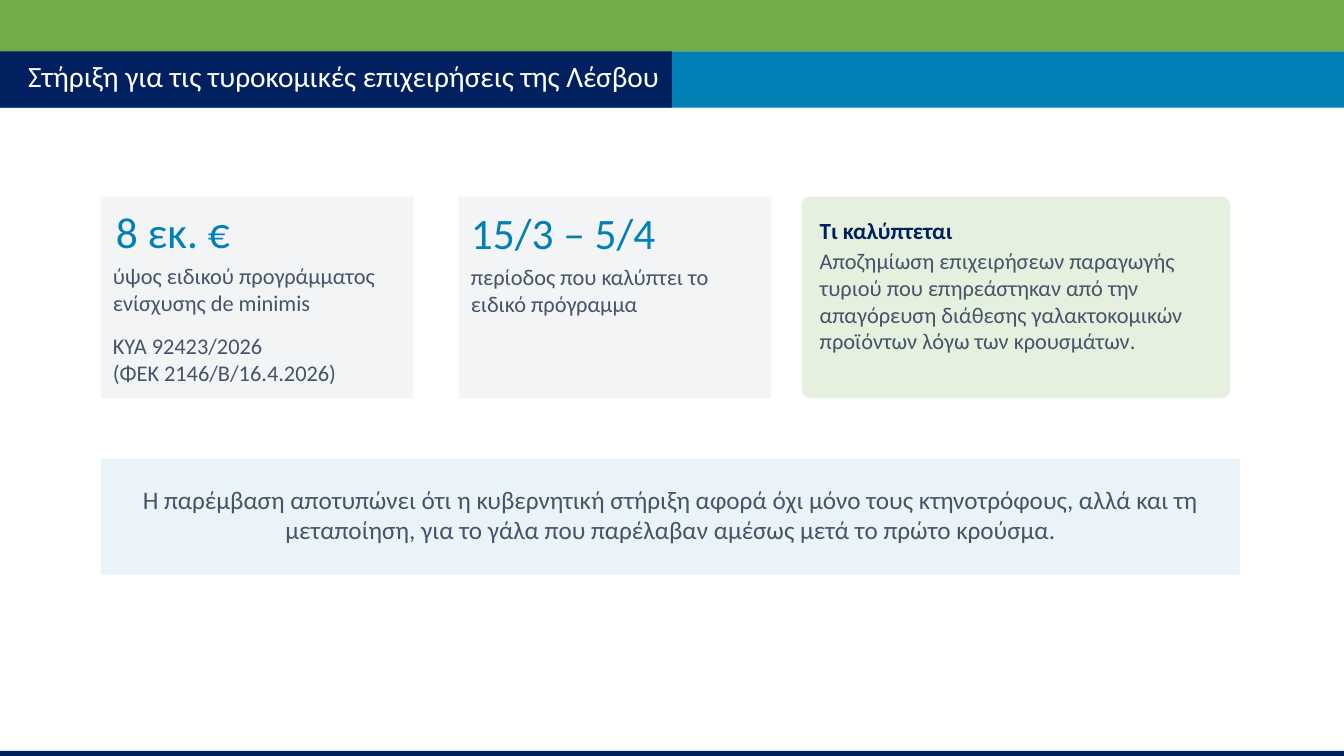
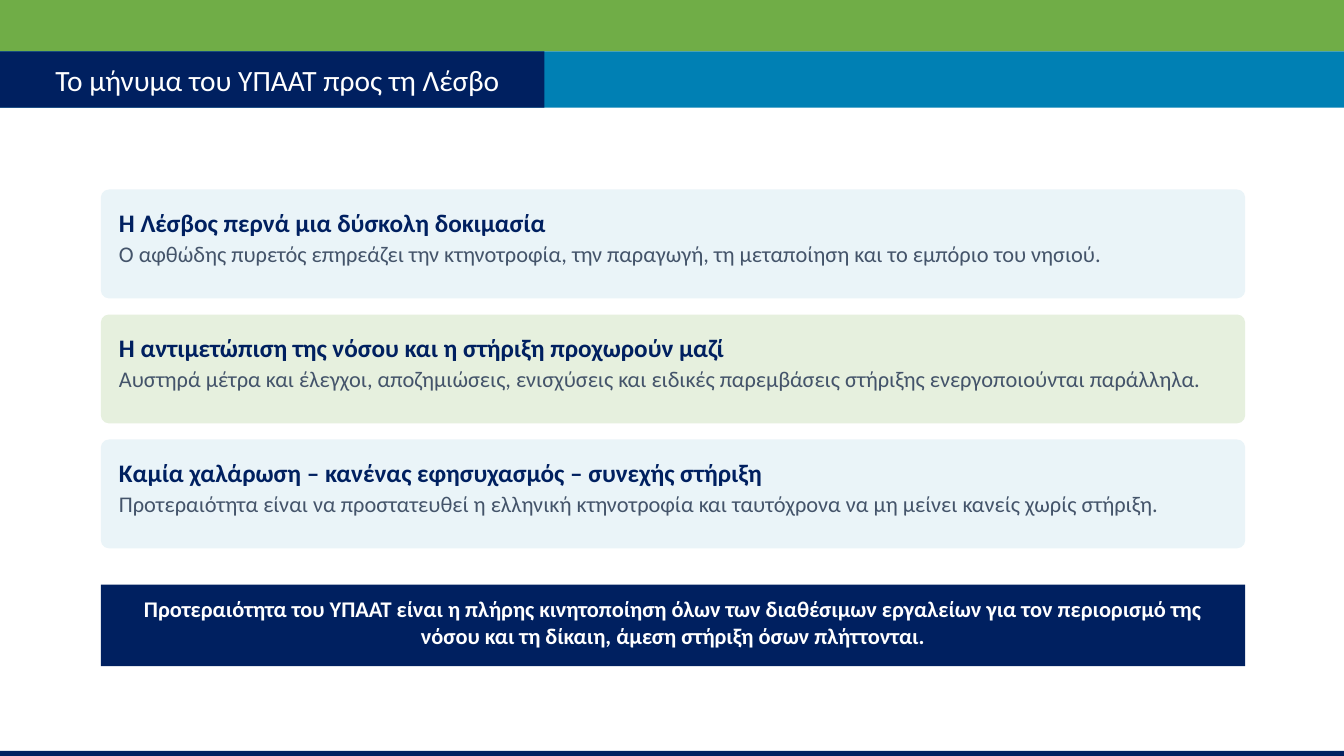
import dataclasses

import pptx
import pptx.dml.color
import pptx.enum.shapes
import pptx.enum.text
import pptx.util

WIDTH, HEIGHT = 13.33, 7.5
COLUMNS, ROWS = 133.3, 75
MARGIN = 10
CORNER = 0.8

SHAPE = pptx.enum.shapes.MSO_SHAPE
ALIGN = pptx.enum.text.PP_ALIGN
ANCHOR = pptx.enum.text.MSO_ANCHOR


@dataclasses.dataclass(frozen=True)
class Theme:
    font: str = "Calibri"
    navy: str = "002060"
    blue: str = "0080B4"
    green: str = "70AD47"
    white: str = "FFFFFF"
    ink: str = "44546A"
    pale_gray: str = "F3F4F6"
    pale_blue: str = "EAF4F8"
    pale_green: str = "E6F0DE"
    title: float = 21
    figure: float = 31
    heading: float = 18
    small_heading: float = 16.5
    body: float = 16
    gap: float = 12


THEME = Theme()


def place(column, row, columns, rows):
    across, down = WIDTH / COLUMNS, HEIGHT / ROWS
    lengths = (column * across, row * down, columns * across, rows * down)
    return [pptx.util.Inches(length) for length in lengths]


def add_panel(page, area, color, rounded=False):
    kind = SHAPE.ROUNDED_RECTANGLE if rounded else SHAPE.RECTANGLE
    panel = page.shapes.add_shape(kind, *place(*area))
    panel.shadow.inherit = False
    panel.fill.solid()
    panel.fill.fore_color.rgb = pptx.dml.color.RGBColor.from_string(color)
    panel.line.fill.background()
    if rounded:
        panel.adjustments[0] = CORNER / min(area[2:])


def add_text(page, area, lines, size, color, bold=False,
             align=ALIGN.LEFT, anchor=ANCHOR.MIDDLE):
    box = page.shapes.add_textbox(*place(*area))
    frame = box.text_frame
    frame.word_wrap = True
    frame.vertical_anchor = anchor
    frame.margin_left = frame.margin_right = 0
    frame.margin_top = frame.margin_bottom = 0
    for number, line in enumerate(lines):
        para = frame.add_paragraph() if number else frame.paragraphs[0]
        para.alignment = align
        span = para.add_run()
        span.text = line
        span.font.name = THEME.font
        span.font.size = pptx.util.Pt(size)
        span.font.bold = bold
        span.font.color.rgb = pptx.dml.color.RGBColor.from_string(color)
    return frame


def add_page(deck, title, title_at, tab_columns):
    page = deck.slides.add_slide(deck.slide_layouts[6])
    add_panel(page, (0, 0, COLUMNS, 5.1), THEME.green)
    add_panel(page, (0, 5.1, COLUMNS, 5.6), THEME.blue)
    add_panel(page, (0, 5.1, tab_columns, 5.6), THEME.navy)
    add_text(page, (*title_at, 118, 3.4), [title], THEME.title, THEME.white)
    add_panel(page, (0, ROWS - 0.5, COLUMNS, 0.5), THEME.navy)
    return page


def add_figure_card(page, area, figure, caption, indent, drop):
    column, row, columns, rows = area
    add_panel(page, area, THEME.pale_gray)
    add_text(page, (column + indent, row + drop, columns - indent, 6.2),
             [figure], THEME.figure, THEME.blue)
    caption_area = (column + 1.2, row + drop + 6.2, columns - 2.7, 13)
    return add_text(page, caption_area, caption, THEME.body, THEME.ink,
                    anchor=ANCHOR.TOP)


def add_message_card(page, area, color, heading, body, size):
    column, row, columns, rows = area
    left, inner = column + 1.8, columns - 3.6
    add_panel(page, area, color, rounded=True)
    add_text(page, (left, row + 1.4, inner, 3.8), [heading], size,
             THEME.navy, bold=True)
    add_text(page, (left, row + 5, inner, rows - 6.2), [body], THEME.body,
             THEME.ink, anchor=ANCHOR.TOP)


def add_banner(page, area, color, text, inset, middle, size, ink, bold=False):
    column, row, columns, rows = area
    add_panel(page, area, color)
    add_text(page, (column + inset, row + middle - 1.5, columns - 2 * inset, 3),
             [text], size, ink, bold, ALIGN.CENTER)


def build_support(deck):
    page = add_page(deck, "Στήριξη για τις τυροκομικές επιχειρήσεις της Λέσβου",
                    (2.8, 5.8), COLUMNS / 2)
    top, tall = 19.5, 20
    caption = add_figure_card(
        page, (MARGIN, top, 31, tall), "8 εκ. €",
        ["ύψος ειδικού προγράμματος ενίσχυσης de minimis",
         "ΚΥΑ 92423/2026", "(ΦΕΚ 2146/Β/16.4.2026)"], 1.5, 0.3)
    caption.paragraphs[1].space_before = pptx.util.Pt(THEME.gap)
    add_figure_card(page, (45.5, top, 31, tall), "15/3 – 5/4",
                    ["περίοδος που καλύπτει το ειδικό πρόγραμμα"], 1.2, 0.4)
    add_message_card(
        page, (79.5, top, 42.5, tall), THEME.pale_green, "Τι καλύπτεται",
        "Αποζημίωση επιχειρήσεων παραγωγής τυριού που επηρεάστηκαν από την "
        "απαγόρευση διάθεσης γαλακτοκομικών προϊόντων λόγω των κρουσμάτων.",
        THEME.small_heading)
    add_banner(
        page, (MARGIN, 45.5, 113, 11.5), THEME.pale_blue,
        "Η παρέμβαση αποτυπώνει ότι η κυβερνητική στήριξη αφορά όχι μόνο τους "
        "κτηνοτρόφους, αλλά και τη μεταποίηση, για το γάλα που παρέλαβαν "
        "αμέσως μετά το πρώτο κρούσμα.",
        2.8, 5.55, THEME.heading, THEME.ink)


def build_message(deck):
    page = add_page(deck, "Το μήνυμα του ΥΠΑΑΤ προς τη Λέσβο", (5.5, 6.2), 54)
    wide, top, step = 113.5, 18.8, 12.4
    messages = [
        (THEME.pale_blue, "Η Λέσβος περνά μια δύσκολη δοκιμασία",
         "Ο αφθώδης πυρετός επηρεάζει την κτηνοτροφία, την παραγωγή, "
         "τη μεταποίηση και το εμπόριο του νησιού."),
        (THEME.pale_green,
         "Η αντιμετώπιση της νόσου και η στήριξη προχωρούν μαζί",
         "Αυστηρά μέτρα και έλεγχοι, αποζημιώσεις, ενισχύσεις και ειδικές "
         "παρεμβάσεις στήριξης ενεργοποιούνται παράλληλα."),
        (THEME.pale_blue,
         "Καμία χαλάρωση – κανένας εφησυχασμός – συνεχής στήριξη",
         "Προτεραιότητα είναι να προστατευθεί η ελληνική κτηνοτροφία και "
         "ταυτόχρονα να μη μείνει κανείς χωρίς στήριξη."),
    ]
    for number, (color, heading, body) in enumerate(messages):
        area = (MARGIN, top + number * step, wide, 10.8)
        add_message_card(page, area, color, heading, body, THEME.heading)
    add_banner(
        page, (MARGIN, 58, wide, 8.1), THEME.navy,
        "Προτεραιότητα του ΥΠΑΑΤ είναι η πλήρης κινητοποίηση όλων των "
        "διαθέσιμων εργαλείων για τον περιορισμό της νόσου και τη δίκαιη, "
        "άμεση στήριξη όσων πλήττονται.",
        2.5, 3.7, THEME.body, THEME.white, bold=True)


def main():
    deck = pptx.Presentation()
    deck.slide_width = pptx.util.Inches(WIDTH)
    deck.slide_height = pptx.util.Inches(HEIGHT)
    build_support(deck)
    build_message(deck)
    deck.save("out.pptx")


if __name__ == "__main__":
    main()
